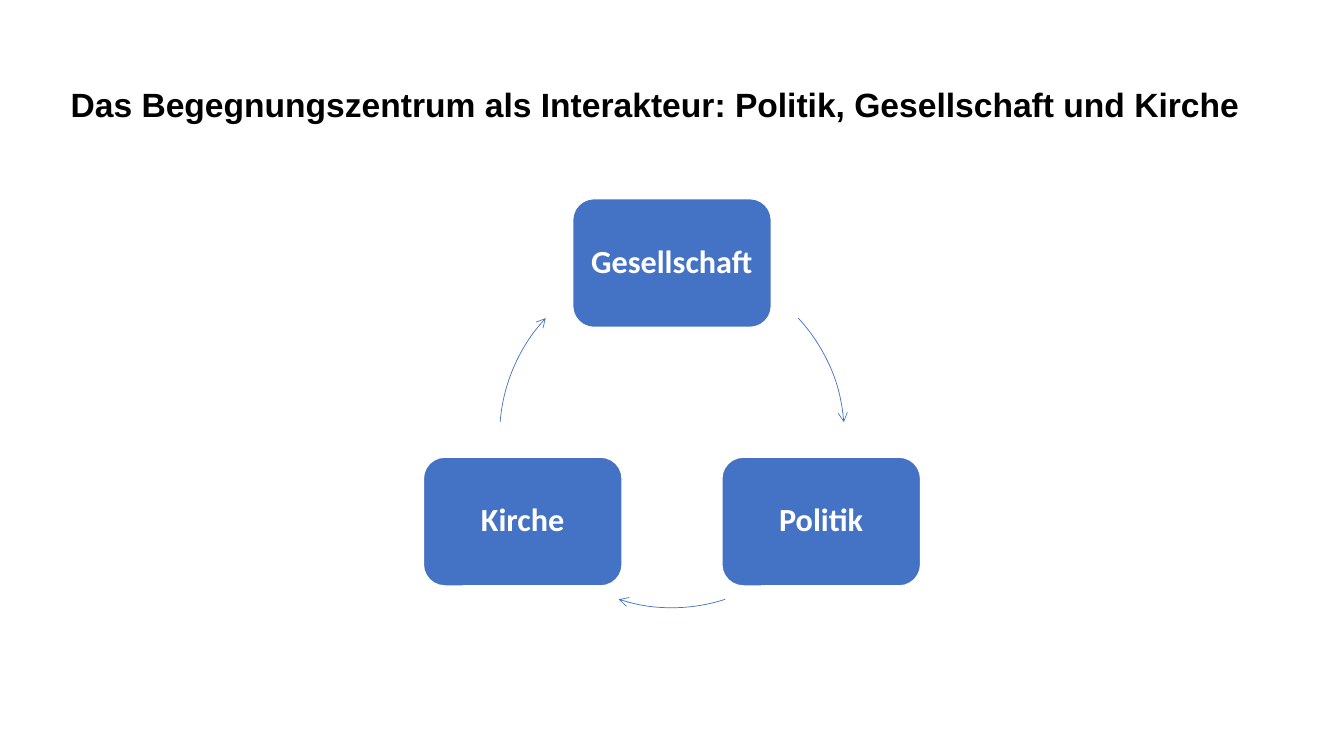
import math

from lxml import etree
from pptx import Presentation
from pptx.dml.color import RGBColor
from pptx.enum.shapes import MSO_SHAPE
from pptx.enum.text import MSO_ANCHOR, MSO_AUTO_SIZE, PP_ALIGN
from pptx.oxml.ns import qn
from pptx.util import Pt

ARC, ROUNDED = MSO_SHAPE.ARC, MSO_SHAPE.ROUNDED_RECTANGLE
BOTTOM, MIDDLE = MSO_ANCHOR.BOTTOM, MSO_ANCHOR.MIDDLE
LEFT, CENTER = PP_ALIGN.LEFT, PP_ALIGN.CENTER
NO_AUTOFIT = MSO_AUTO_SIZE.NONE

BLUE = RGBColor(0x44, 0x72, 0xC4)
WHITE = RGBColor(0xFF, 0xFF, 0xFF)
BLACK = RGBColor(0x00, 0x00, 0x00)

TITLE_ONLY = 5
TITLE = "Das Begegnungszentrum als Interakteur: Politik, Gesellschaft und Kirche"
INSET = 7.2

# The cycle: nodes sit on a circle, arcs run clockwise between them
CENTER_X, CENTER_Y, RADIUS = 480, 311, 123.1
NODE_WIDTH, NODE_HEIGHT = 142, 92
NODES = ["Gesellschaft", "Politik", "Kirche"]
FIRST_ANGLE = -90
ARC_ANGLES = [(317.1, 355.6), (72, 108), (184.4, 222.9)]
ADJUSTMENT_PER_DEGREE = 0.6

TITLE_FONT = {"name": "Arial", "size": Pt(24), "bold": True}
NODE_FONT = {"name": "Calibri", "size": Pt(23), "bold": True}


def set_attributes(target, values):
    for name, value in values.items():
        setattr(target, name, value)


def set_text(shape, text, font, color, alignment, anchor):
    frame = shape.text_frame
    frame.text = text
    set_attributes(frame, {
        "word_wrap": True, "auto_size": NO_AUTOFIT, "vertical_anchor": anchor,
        "margin_left": Pt(INSET), "margin_right": Pt(INSET),
        "margin_top": Pt(INSET), "margin_bottom": Pt(INSET),
    })
    paragraph = frame.paragraphs[0]
    set_attributes(paragraph, {"alignment": alignment, "line_spacing": 0.9})
    set_attributes(paragraph.font, font)
    paragraph.font.color.rgb = color


def set_title(slide):
    title = slide.shapes.title
    set_attributes(title, {"left": Pt(43.2), "top": Pt(21.6),
                           "width": Pt(878.4), "height": Pt(75)})
    set_text(title, TITLE, TITLE_FONT, BLACK, LEFT, BOTTOM)


def add_centered_shape(slide, kind, x, y, width, height, line_color, line_width):
    shape = slide.shapes.add_shape(kind, Pt(x - width / 2), Pt(y - height / 2),
                                   Pt(width), Pt(height))
    shape.shadow.inherit = False
    shape.line.color.rgb = line_color
    shape.line.width = Pt(line_width)
    return shape


def add_node(slide, text, degrees):
    angle = math.radians(degrees)
    x = CENTER_X + RADIUS * math.cos(angle)
    y = CENTER_Y + RADIUS * math.sin(angle)
    node = add_centered_shape(slide, ROUNDED, x, y, NODE_WIDTH, NODE_HEIGHT, WHITE, 1)
    node.fill.solid()
    node.fill.fore_color.rgb = BLUE
    set_text(node, text, NODE_FONT, WHITE, CENTER, MIDDLE)


def add_arc_arrow(slide, start, end):
    arc = add_centered_shape(slide, ARC, CENTER_X, CENTER_Y,
                             2 * RADIUS, 2 * RADIUS, BLUE, 0.5)
    arc.fill.background()
    for index, degrees in enumerate((start, end)):
        arc.adjustments[index] = degrees * ADJUSTMENT_PER_DEGREE
    line = arc.line.fill._xPr
    etree.SubElement(line, qn("a:tailEnd"), type="arrow")


def main():
    presentation = Presentation()
    set_attributes(presentation, {"slide_width": Pt(960), "slide_height": Pt(540)})
    slide = presentation.slides.add_slide(presentation.slide_layouts[TITLE_ONLY])
    set_title(slide)

    # Nodes and the arrows that follow them
    step = 360 / len(NODES)
    for index, (text, angles) in enumerate(zip(NODES, ARC_ANGLES)):
        add_node(slide, text, FIRST_ANGLE + index * step)
        add_arc_arrow(slide, *angles)

    presentation.save("out.pptx")


if __name__ == "__main__":
    main()
